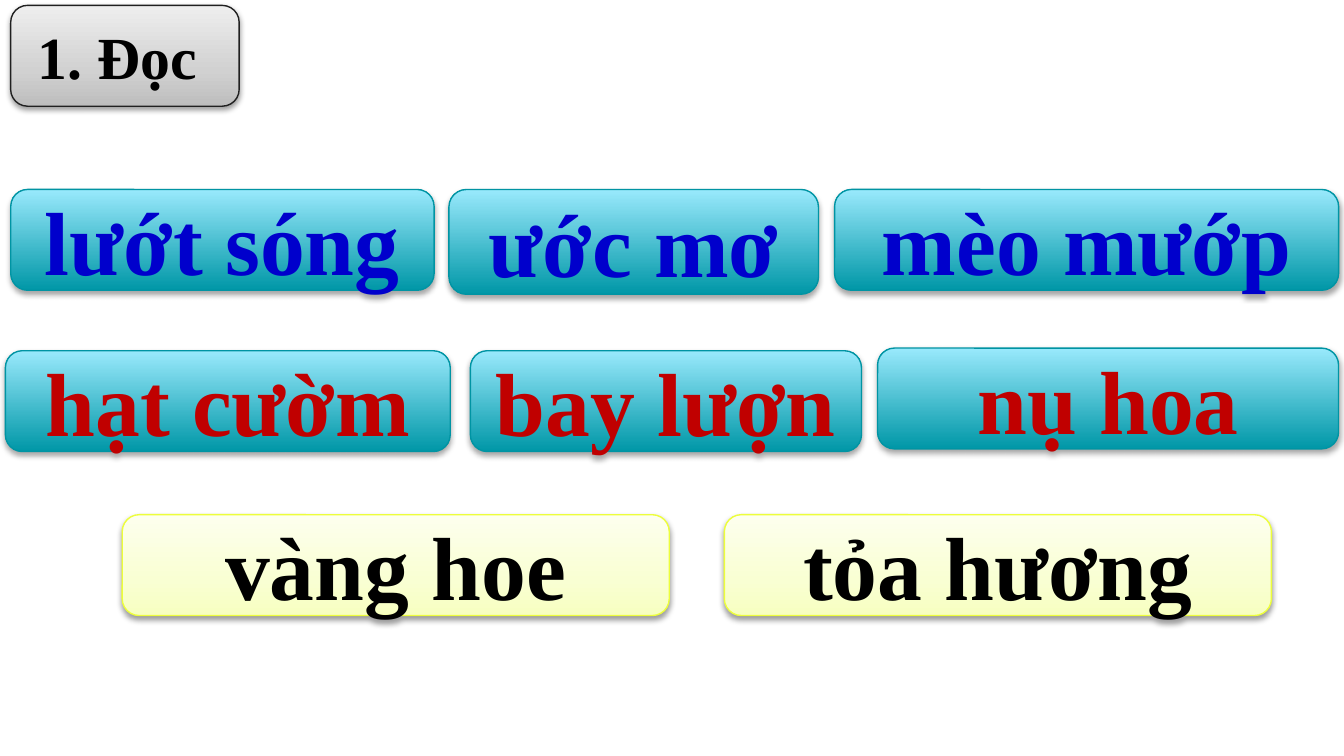
"""Build a reading slide of Vietnamese words on rounded cards."""
from copy import deepcopy

from lxml.etree import SubElement
from pptx import Presentation
from pptx.dml.color import RGBColor
from pptx.enum.shapes import MSO_SHAPE as Shape
from pptx.enum.text import MSO_ANCHOR as Anchor, PP_ALIGN as Align
from pptx.oxml.ns import qn
from pptx.util import Inches, Pt

BLUE = RGBColor(0x00, 0x00, 0xCC)
RED = RGBColor(0xC0, 0x00, 0x00)
BLACK = RGBColor(0x00, 0x00, 0x00)
TEAL_DARK = RGBColor(0x00, 0x97, 0xA7)
TEAL_LIGHT = RGBColor(0x99, 0xE9, 0xFC)
TEAL_EDGE = RGBColor(0x00, 0x94, 0xA3)
CREAM_DARK = RGBColor(0xF7, 0xFF, 0xC0)
CREAM_MID = RGBColor(0xF9, 0xFF, 0xD3)
CREAM_LIGHT = RGBColor(0xFD, 0xFF, 0xEE)
CREAM_EDGE = RGBColor(0xED, 0xFE, 0x3B)
GREY_DARK = RGBColor(0xBD, 0xBD, 0xBD)
GREY_MID = RGBColor(0xD1, 0xD1, 0xD1)
GREY_LIGHT = RGBColor(0xEE, 0xEE, 0xEE)
GREY_EDGE = RGBColor(0x20, 0x20, 0x20)

SLIDE_WIDTH = Inches(10)
SLIDE_HEIGHT = SLIDE_WIDTH * 9 // 16
CELL = SLIDE_WIDTH // 100
CARD_ROWS = 7.5
TEAL = {"stops": [(0, TEAL_DARK), (1, TEAL_LIGHT)], "edge": TEAL_EDGE,
        "alpha": 35, "drop": 1.8}
CREAM = {"stops": [(0, CREAM_DARK), (0.35, CREAM_MID), (1, CREAM_LIGHT)],
         "edge": CREAM_EDGE, "alpha": 38, "drop": 1.6}
GREY = {"stops": [(0, GREY_DARK), (0.35, GREY_MID), (1, GREY_LIGHT)],
        "edge": GREY_EDGE, "alpha": 38, "drop": 1.6}

WORD_ROWS = [
    (TEAL, BLUE, [("lướt sóng", 0.8, 14.1, 31.5, CARD_ROWS),
                  ("ước mơ", 33.4, 14.1, 27.5, 7.8),
                  ("mèo mướp", 62.1, 14.1, 37.5, CARD_ROWS)]),
    (TEAL, RED, [("hạt cườm", 0.4, 26.1, 33.1, CARD_ROWS),
                 ("bay lượn", 35, 26.1, 29.1, CARD_ROWS),
                 ("nụ hoa", 65.3, 25.9, 34.3, CARD_ROWS)]),
    (CREAM, BLACK, [("vàng hoe", 9.1, 38.3, 40.7, CARD_ROWS),
                    ("tỏa hương", 53.9, 38.3, 40.7, CARD_ROWS)]),
]


def paint_gradient(card, stops):
    """Fill a card with a gradient that runs from bottom to top."""
    card.fill.gradient()
    card.fill.gradient_angle = 90
    stop_list = card._element.spPr.find(qn("a:gradFill")).find(qn("a:gsLst"))
    while len(stop_list) < len(stops):
        stop_list.append(deepcopy(stop_list[-1]))
    for stop, (position, color) in zip(card.fill.gradient_stops, stops):
        stop.position = position
        stop.color.rgb = color


def drop_shadow(card, alpha, drop):
    """Put a soft shadow straight below a card."""
    card.shadow.inherit = False
    effects = card._element.spPr.find(qn("a:effectLst"))
    shadow = SubElement(effects, qn("a:outerShdw"), blurRad=str(Pt(3.1)),
                        dist=str(Pt(drop)), dir="5400000", rotWithShape="0")
    color = SubElement(shadow, qn("a:srgbClr"), val=str(BLACK))
    SubElement(color, qn("a:alpha"), val=str(alpha * 1000))


def write_text(card, text, size, color):
    """Write one centred bold line in a card."""
    frame = card.text_frame
    margins = {"margin_left": 0.07, "margin_right": 0.07,
               "margin_top": 0.04, "margin_bottom": 0.04}
    for name, value in margins.items():
        setattr(frame, name, Inches(value))
    frame.word_wrap = True
    frame.vertical_anchor = Anchor.MIDDLE
    para = frame.paragraphs[0]
    para.alignment = Align.CENTER
    span = para.add_run()
    span.text = text
    looks = {"name": "Times New Roman", "size": Pt(size), "bold": True}
    for name, value in looks.items():
        setattr(span.font, name, value)
    span.font.color.rgb = color


def add_card(page, text, column, row, columns, rows, style, color, size=48):
    """Add a rounded card placed in grid cells."""
    lengths = [round(cells * CELL) for cells in (column, row, columns, rows)]
    card = page.shapes.add_shape(Shape.ROUNDED_RECTANGLE, *lengths)
    paint_gradient(card, style["stops"])
    card.line.color.rgb = style["edge"]
    card.line.width = Pt(0.75)
    drop_shadow(card, style["alpha"], style["drop"])
    write_text(card, text, size, color)


def main():
    """Build and save the deck."""
    deck = Presentation()
    deck.slide_width, deck.slide_height = SLIDE_WIDTH, SLIDE_HEIGHT
    page = deck.slides.add_slide(deck.slide_layouts[6])
    add_card(page, "1. Đọc ", 0.8, 0.4, 17, CARD_ROWS, GREY, BLACK, size=32)
    for style, color, words in WORD_ROWS:
        for word in words:
            add_card(page, *word, style, color)
    deck.save("out.pptx")


if __name__ == "__main__":
    main()
